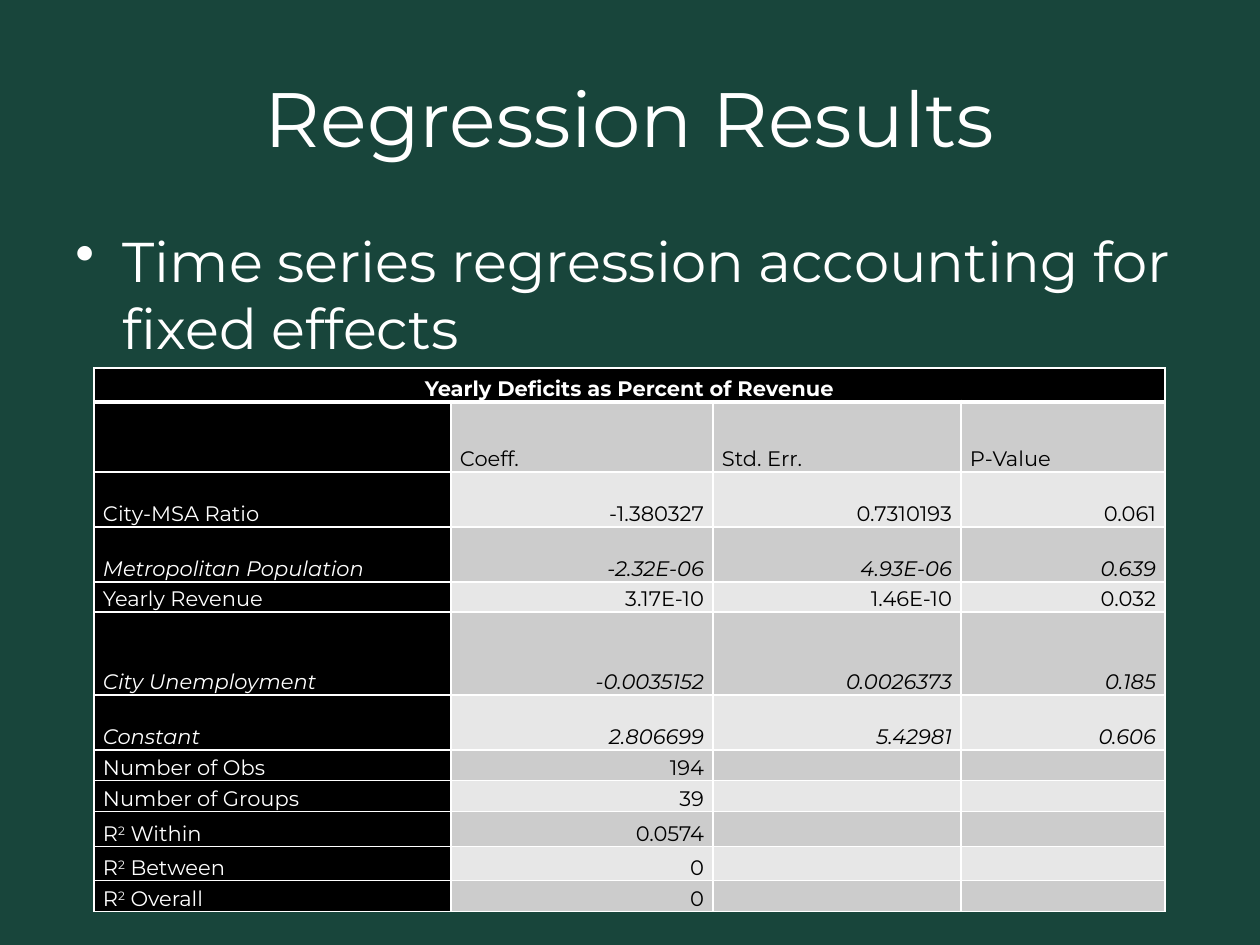
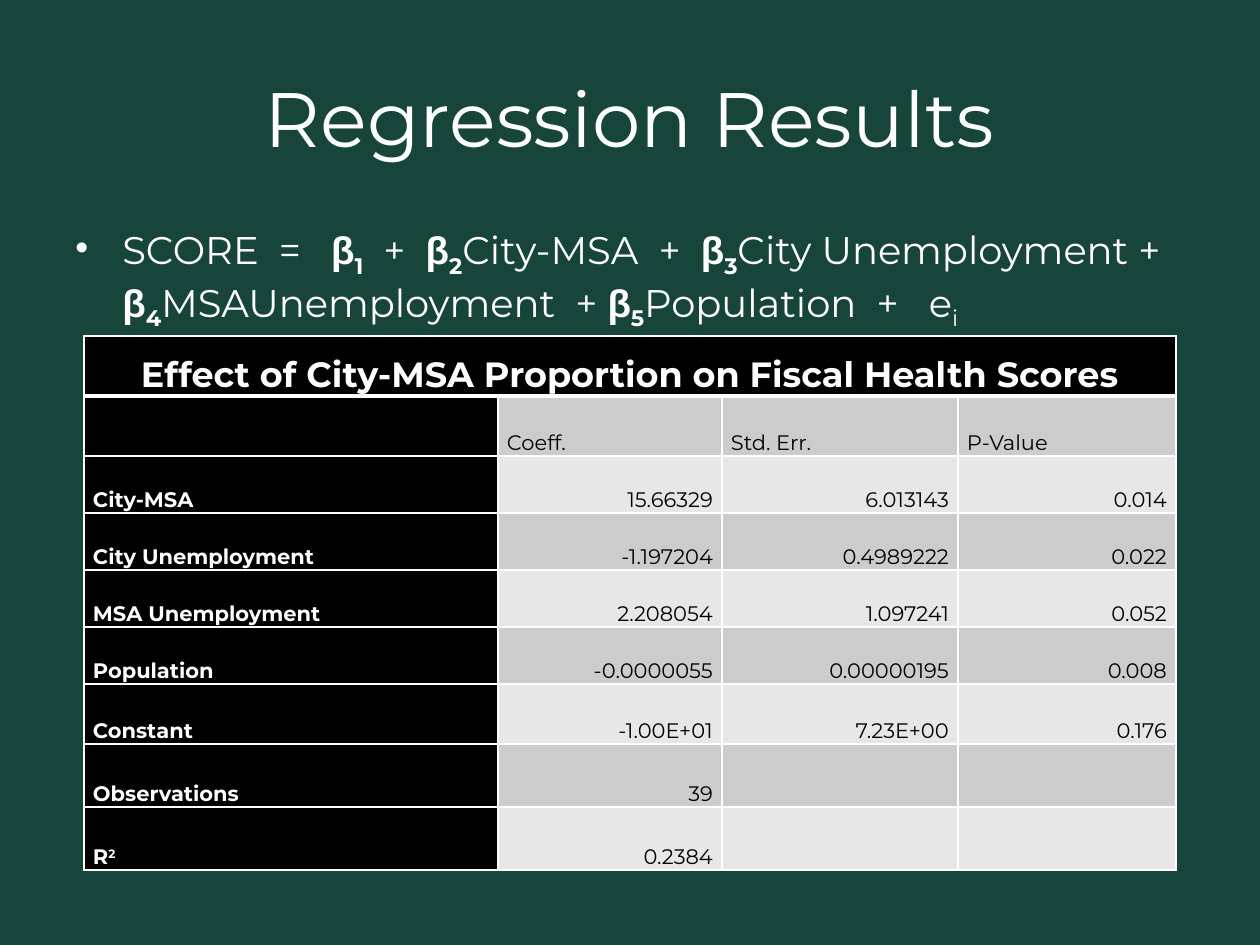
from dataclasses import dataclass

from lxml.etree import SubElement
from pptx import Presentation
from pptx.dml.color import RGBColor
from pptx.enum.text import MSO_ANCHOR, PP_ALIGN
from pptx.oxml.ns import qn
from pptx.util import Emu, Pt


@dataclass(frozen=True)
class Theme:
    background: str = "18453B"
    light: str = "FFFFFF"
    dark: str = "000000"
    bands: tuple = ("CCCCCC", "E7E7E7")
    font: str = "Montserrat"
    symbol_font: str = "Arial"
    title_size: int = 44
    bullet_size: int = 32
    formula_size: int = 22
    cell_size: int = 12
    border: int = 1
    header_rule: int = 3


PX_PER_INCH = 126
SUPERSCRIPT, SUBSCRIPT = 30000, -25000


def px(length):
    return Emu(round(length * 914400 / PX_PER_INCH))


def add_run(paragraph, text, font=None, bold=None, baseline=None):
    run = paragraph.add_run()
    run.text = text
    if font:
        run.font.name = font
    if bold is not None:
        run.font.bold = bold
    if baseline:
        run._r.get_or_add_rPr().set("baseline", str(baseline))


def add_label(paragraph, text):
    """Write text in which ^2 stands for a raised 2."""
    base, *raised = text.split("^")
    if base:
        add_run(paragraph, base)
    for part in raised:
        add_run(paragraph, part[0], baseline=SUPERSCRIPT)
        if part[1:]:
            add_run(paragraph, part[1:])


class Deck:
    def __init__(self, theme):
        self.theme = theme
        self.presentation = Presentation()
        self.presentation.slide_width = px(1260)
        self.presentation.slide_height = px(945)
        self.slide = None

    def add_slide(self, title):
        self.slide = self.presentation.slides.add_slide(self.presentation.slide_layouts[6])
        fill = self.slide.background.fill
        fill.solid()
        fill.fore_color.rgb = RGBColor.from_string(self.theme.background)
        heading = self.add_text_box(38, 157, self.theme.title_size, MSO_ANCHOR.MIDDLE)
        heading.alignment = PP_ALIGN.CENTER
        add_run(heading, title)

    def set_font(self, paragraph, size, color, bold=False, italic=False):
        font = paragraph.font
        font.name, font.size = self.theme.font, Pt(size)
        font.bold, font.italic = bold, italic
        font.color.rgb = RGBColor.from_string(color)

    def add_text_box(self, top, height, size, anchor=MSO_ANCHOR.TOP):
        """Add a text box across the slide and return its paragraph."""
        frame = self.slide.shapes.add_textbox(px(63), px(top), px(1134), px(height)).text_frame
        frame.word_wrap = True
        frame.vertical_anchor = anchor
        paragraph = frame.paragraphs[0]
        self.set_font(paragraph, size, self.theme.light)
        return paragraph

    def add_bullet(self, size):
        """Add the bulleted body and return its paragraph, still without text."""
        paragraph = self.add_text_box(220, 624, size)
        paragraph.space_before = Pt(size * 0.2)
        properties = paragraph._p.get_or_add_pPr()
        properties.set("marL", str(px(47)))
        properties.set("indent", str(-px(47)))
        bullet = properties.makeelement(qn("a:buChar"), {"char": "•"})
        properties.find(qn("a:defRPr")).addprevious(bullet)
        return paragraph

    def add_formula(self, terms, error):
        """Write each term followed by its numbered β, then the indexed error."""
        paragraph = self.add_bullet(self.theme.formula_size)
        for number, term in enumerate(terms, start=1):
            add_run(paragraph, term)
            add_run(paragraph, "β", font=self.theme.symbol_font, bold=True)
            add_run(paragraph, str(number), bold=True, baseline=SUBSCRIPT)
        add_run(paragraph, error)
        add_run(paragraph, "i", baseline=SUBSCRIPT)

    def add_results(self, left, top, widths, heights, caption, caption_size, rows,
                    bold_labels=False, italic_rows=()):
        table = self.slide.shapes.add_table(
            len(heights), len(widths), px(left), px(top),
            px(sum(widths)), px(sum(heights))).table
        table.first_row = table.horz_banding = False
        for column, width in zip(table.columns, widths):
            column.width = px(width)
        for row, height in zip(table.rows, heights):
            row.height = px(height)

        empty = [""] * len(widths)
        headings = ["", "Coeff.", "Std. Err.", "P-Value"]
        for r, texts in enumerate([[caption], headings, *rows]):
            for c, text in enumerate((texts + empty)[:len(widths)]):
                on_black = r == 0 or c == 0
                cell = table.cell(r, c)
                self.style_cell(cell, r, on_black)
                paragraph = cell.text_frame.paragraphs[0]
                paragraph.line_spacing = 1.15
                if r == 0:
                    paragraph.alignment = PP_ALIGN.CENTER
                elif r > 1 and c > 0:
                    paragraph.alignment = PP_ALIGN.RIGHT
                self.set_font(
                    paragraph, caption_size if r == 0 else self.theme.cell_size,
                    self.theme.light if on_black else self.theme.dark,
                    bold=r == 0 or (bold_labels and c == 0),
                    italic=texts[0] in italic_rows)
                add_label(paragraph, text)
        table.cell(0, 0).merge(table.cell(0, len(widths) - 1))

    def style_cell(self, cell, row, on_black):
        cell.vertical_anchor = MSO_ANCHOR.BOTTOM
        cell.margin_left = cell.margin_right = px(9)
        cell.margin_top = cell.margin_bottom = 0
        thick_side = {0: "lnB", 1: "lnT"}.get(row)
        properties = cell._tc.get_or_add_tcPr()
        for side in ("lnL", "lnR", "lnT", "lnB"):
            width = self.theme.header_rule if side == thick_side else self.theme.border
            line = SubElement(properties, qn(f"a:{side}"), w=str(Pt(width)))
            SubElement(SubElement(line, qn("a:solidFill")), qn("a:srgbClr"), val=self.theme.light)
        cell.fill.solid()
        color = self.theme.dark if on_black else self.theme.bands[(row + 1) % 2]
        cell.fill.fore_color.rgb = RGBColor.from_string(color)


def add_deficit_slide(deck):
    deck.add_slide("Regression Results")
    add_run(deck.add_bullet(deck.theme.bullet_size),
            "Time series regression accounting for fixed effects")
    deck.add_results(
        left=94, top=368, widths=[357, 262, 248, 204],
        heights=[34, 70, 55, 55, 30, 83, 55, 31, 31, 35, 34, 31],
        caption="Yearly Deficits as Percent of Revenue", caption_size=12,
        rows=[
            ["City-MSA Ratio", "-1.380327", "0.7310193", "0.061"],
            ["Metropolitan Population", "-2.32E-06", "4.93E-06", "0.639"],
            ["Yearly Revenue", "3.17E-10", "1.46E-10", "0.032"],
            ["City Unemployment", "-0.0035152", "0.0026373", "0.185"],
            ["Constant", "2.806699", "5.42981", "0.606"],
            ["Number of Obs", "194"],
            ["Number of Groups", "39"],
            ["R^2 Within", "0.0574"],
            ["R^2 Between", "0"],
            ["R^2 Overall", "0"],
        ],
        italic_rows=("Metropolitan Population", "City Unemployment", "Constant"))


def add_score_slide(deck):
    deck.add_slide("Regression Results")
    deck.add_formula(
        ["SCORE  =   ", "  +  ", "City-MSA  +  ", "City Unemployment +  ",
         "MSAUnemployment  + "],
        error="Population  +   e")
    deck.add_results(
        left=84, top=336, widths=[414, 224, 236, 218],
        heights=[60, 60, 57, 57, 57, 57, 60, 63, 63],
        caption="Effect of City-MSA Proportion on Fiscal Health Scores", caption_size=20,
        rows=[
            ["City-MSA", "15.66329", "6.013143", "0.014"],
            ["City Unemployment", "-1.197204", "0.4989222", "0.022"],
            ["MSA Unemployment", "2.208054", "1.097241", "0.052"],
            ["Population", "-0.0000055", "0.00000195", "0.008"],
            ["Constant", "-1.00E+01", "7.23E+00", "0.176"],
            ["Observations", "39"],
            ["R^2", "0.2384"],
        ],
        bold_labels=True)


def main():
    deck = Deck(Theme())
    add_deficit_slide(deck)
    add_score_slide(deck)
    deck.presentation.save("out.pptx")


if __name__ == "__main__":
    main()
